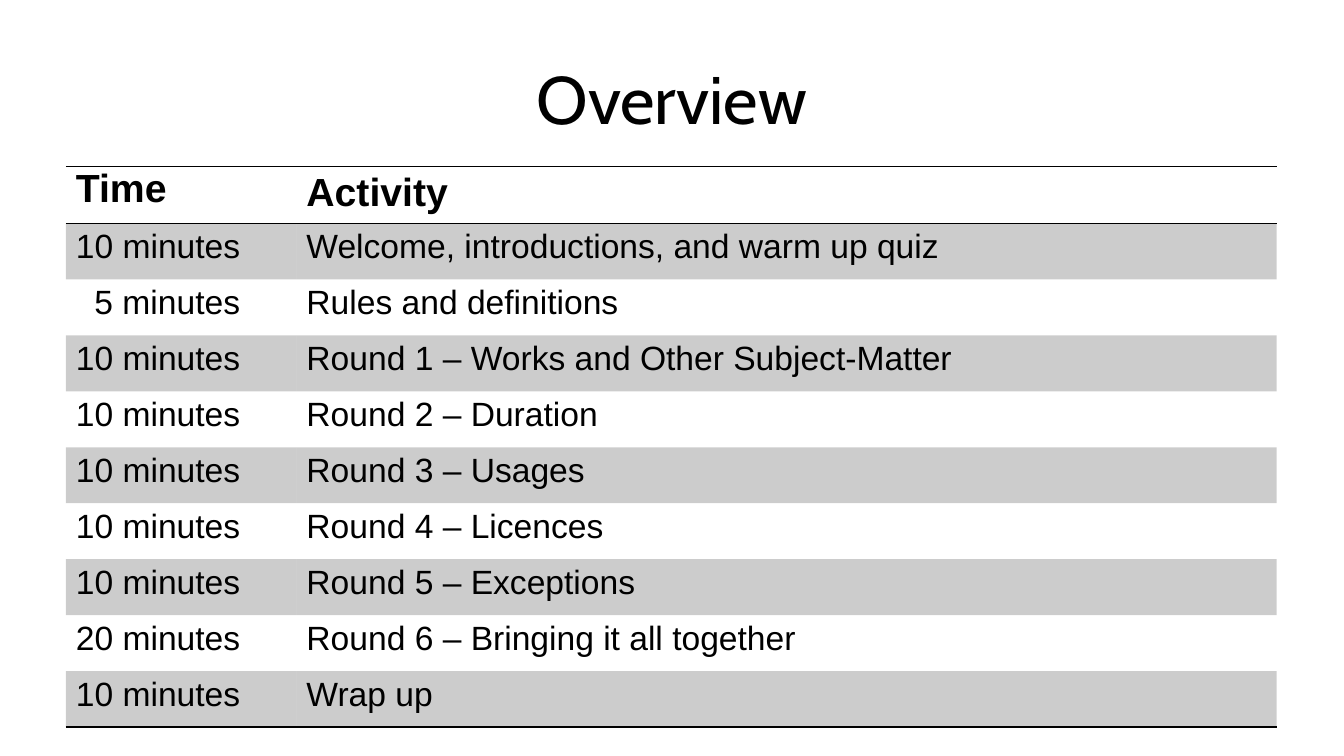
"""Build the workshop overview slide with its timetable."""
from dataclasses import dataclass

from lxml import etree
from pptx import Presentation
from pptx.dml.color import RGBColor
from pptx.enum.text import MSO_ANCHOR, PP_ALIGN
from pptx.oxml.ns import qn
from pptx.util import Cm, Pt

BOTTOM = MSO_ANCHOR.BOTTOM
CENTER = PP_ALIGN.CENTER
PLAIN_TABLE = "{2D5ABB26-0587-4C30-8999-92F81FD0307C}"


@dataclass(frozen=True)
class Theme:
    """Colours, fonts and type sizes."""
    ink: str = "000000"
    band_alpha: int = 20
    rule_width: float = 1
    title_font: str = "Cabin"
    body_font: str = "Arial"
    title_size: int = 48
    head_size: int = 28
    body_size: int = 24


THEME = Theme()
HEADINGS = ("Time", "Activity")
AGENDA = (
    (10, "Welcome, introductions, and warm up quiz"),
    (5, "Rules and definitions"),
    (10, "Round 1 – Works and Other Subject-Matter"),
    (10, "Round 2 – Duration"),
    (10, "Round 3 – Usages"),
    (10, "Round 4 – Licences"),
    (10, "Round 5 – Exceptions"),
    (20, "Round 6 – Bringing it all together"),
    (10, "Wrap up"),
)


def set_text(tf, text, font, size, bold=False):
    """Write one styled paragraph and return it."""
    p = tf.paragraphs[0]
    p.text = text
    p.font.name = font
    p.font.size = Pt(size)
    p.font.bold = bold
    p.font.color.rgb = RGBColor.from_string(THEME.ink)
    return p


def add_title(s, text):
    """Add the centred slide title."""
    tf = s.shapes.add_textbox(Cm(8.89), Cm(0.48), Cm(16.08), Cm(3.12)).text_frame
    tf.word_wrap = True
    tf.vertical_anchor = BOTTOM
    set_text(tf, text, THEME.title_font, THEME.title_size).alignment = CENTER


def add_rule(cell, side):
    """Draw a thin border on one side of a cell."""
    tc_pr = cell._tc.get_or_add_tcPr()
    ln = etree.SubElement(tc_pr, qn(f"a:{side}"), w=str(Pt(THEME.rule_width)))
    fill = etree.SubElement(ln, qn("a:solidFill"))
    etree.SubElement(fill, qn("a:srgbClr"), val=THEME.ink)


def fill_cell(cell, banded):
    """Tint a banded cell and leave any other one clear."""
    if not banded:
        cell.fill.background()
        return
    cell.fill.solid()
    cell.fill.fore_color.rgb = RGBColor.from_string(THEME.ink)
    color = cell._tc.tcPr.find(f"{qn('a:solidFill')}/{qn('a:srgbClr')}")
    etree.SubElement(color, qn("a:alpha"), val=str(THEME.band_alpha * 1000))


def add_agenda(s):
    """Add the timetable with ruled header and banded rows."""
    rows = [HEADINGS] + [(f"{mins} minutes", activity) for mins, activity in AGENDA]
    row_height = Cm(1.41)
    frame = s.shapes.add_table(len(rows), len(HEADINGS), Cm(1.66), Cm(4.19),
                               Cm(30.51), row_height * len(rows))
    table = frame.table
    frame._element.find(f".//{qn('a:tableStyleId')}").text = PLAIN_TABLE
    for column, width in zip(table.columns, (5.81, 24.7)):
        column.width = Cm(width)
    for i, values in enumerate(rows):
        table.rows[i].height = row_height
        header = i == 0
        size = THEME.head_size if header else THEME.body_size
        for j, text in enumerate(values):
            cell = table.cell(i, j)
            set_text(cell.text_frame, text, THEME.body_font, size, header)
            if header:
                add_rule(cell, "lnT")
            if header or i == len(rows) - 1:
                add_rule(cell, "lnB")
            fill_cell(cell, i % 2 == 1)
        if not header and AGENDA[i - 1][0] < 10:
            table.cell(i, 0).margin_left = Cm(0.72)
    table.cell(0, 0).text_frame.paragraphs[0].line_spacing = 0.9


def main():
    """Build and save the slide."""
    prs = Presentation()
    prs.slide_width, prs.slide_height = Cm(33.87), Cm(19.05)
    s = prs.slides.add_slide(prs.slide_layouts[6])
    add_title(s, "Overview")
    add_agenda(s)
    prs.save("out.pptx")


if __name__ == "__main__":
    main()
